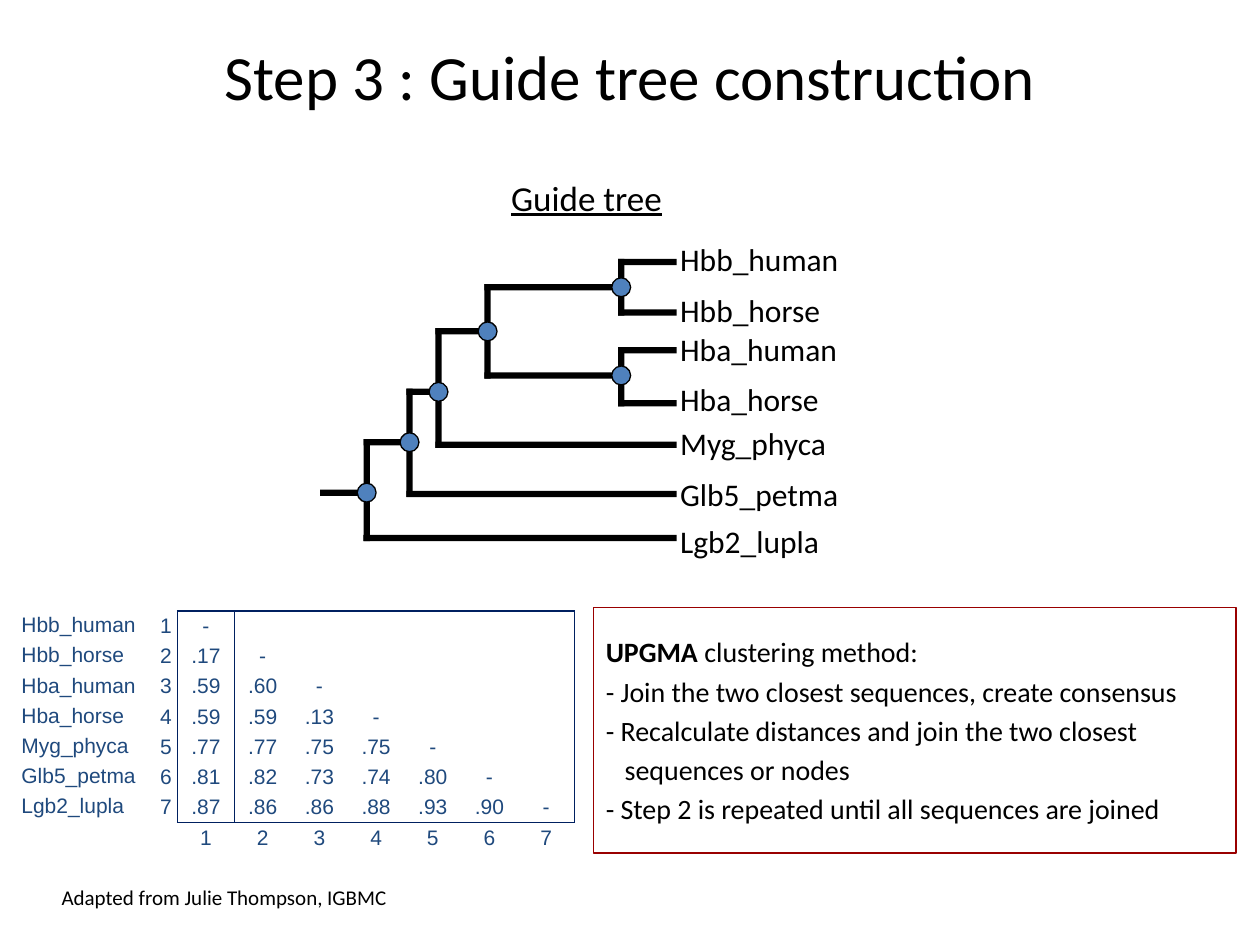
from lxml.etree import SubElement
from pptx import Presentation
from pptx.dml.color import RGBColor
from pptx.enum.shapes import MSO_SHAPE as Shape
from pptx.enum.text import MSO_ANCHOR as Anchor, PP_ALIGN as Align
from pptx.oxml.ns import qn
from pptx.util import Inches, Pt

BLACK = RGBColor(0, 0, 0)
BLUE = RGBColor(0x4F, 0x81, 0xBD)
NAVY = RGBColor(0x00, 0x20, 0x60)
INK = RGBColor(0x1F, 0x49, 0x7D)
RED = RGBColor(0x99, 0, 0)

# Name, height of the branch, top of the label, distances to the names above
LEAVES = [
    ("Hbb_human", 2.08, 1.86, []),
    ("Hbb_horse", 2.48, 2.26, [".17"]),
    ("Hba_human", 2.78, 2.57, [".59", ".60"]),
    ("Hba_horse", 3.2, 2.97, [".59", ".59", ".13"]),
    ("Myg_phyca", 3.53, 3.32, [".77", ".77", ".75", ".75"]),
    ("Glb5_petma", 3.92, 3.72, [".81", ".82", ".73", ".74", ".80"]),
    ("Lgb2_lupla", 4.27, 4.09, [".87", ".86", ".86", ".88", ".93", ".90"]),
]
# Node: x, y and its two children
NODES = {
    "hbb": (4.93, 2.28, "Hbb_human", "Hbb_horse"),
    "hba": (4.93, 2.98, "Hba_human", "Hba_horse"),
    "hb": (3.87, 2.63, "hbb", "hba"),
    "myg": (3.48, 3.11, "hb", "Myg_phyca"),
    "glb": (3.25, 3.51, "myg", "Glb5_petma"),
    "root": (2.91, 3.91, "glb", "Lgb2_lupla"),
}
METHOD = [  # indent, bold part, plain part
    (0, "UPGMA", "\u00a0clustering method:"),
    (0, "", "- Join the two closest sequences, create consensus"),
    (0, "", "- Recalculate distances and join the two closest"),
    (0.15, "", "sequences or nodes"),
    (0, "", "- Step 2 is repeated until all sequences are joined"),
]
TIP, STEM, BAR, DOT = 5.37, 2.54, 0.05, 0.15

deck = Presentation()
deck.slide_width, deck.slide_height = Inches(10), Inches(7.5)
slide = deck.slides.add_slide(deck.slide_layouts[6])
shapes = slide.shapes


def style(run, size, font="Calibri", color=BLACK):
    run.font.size, run.font.name = Pt(size), font
    run.font.color.rgb = color


def add_text(text, place, size, align=Align.LEFT, anchor=Anchor.TOP, wrap=True):
    frame = shapes.add_textbox(*map(Inches, place)).text_frame
    frame.text = text
    frame.word_wrap, frame.vertical_anchor = wrap, anchor
    para = frame.paragraphs[0]
    para.alignment = align
    style(para.runs[0], size)
    return para.runs[0]


def add_solid(kind, place, fill=None, line=None):
    shape = shapes.add_shape(kind, *map(Inches, place))
    shape.shadow.inherit = False
    if fill is None:
        shape.fill.background()
    else:
        shape.fill.solid()
        shape.fill.fore_color.rgb = fill
    if line is None:
        shape.line.fill.background()
    else:
        shape.line.color.rgb = line
        shape.line.width = Pt(0.75)
    return shape


def add_bar(x1, y1, x2, y2):
    """Thick branch between two points, with square ends."""
    half = BAR / 2
    place = (x1 - half, y1 - half, x2 - x1 + BAR, y2 - y1 + BAR)
    add_solid(Shape.RECTANGLE, place, BLACK)


def add_tree():
    spots = {name: (TIP - BAR / 2, y) for name, y, _, _ in LEAVES}
    spots |= {name: node[:2] for name, node in NODES.items()}
    for x, _, high, low in NODES.values():
        for child in (high, low):
            end, y = spots[child]
            add_bar(x, y, end, y)
        add_bar(x, spots[high][1], x, spots[low][1])
    x, y = spots["root"]
    add_bar(STEM + BAR / 2, y, x, y)
    for x, y, _, _ in NODES.values():
        add_solid(Shape.OVAL, (x - DOT / 2, y - DOT / 2, DOT, DOT), BLUE, BLACK)
    for name, _, top, _ in LEAVES:
        add_text(name, (5.3, top, 1.47, 0.4), 18, wrap=False)


def set_edges(cell, **edges):
    """Draw the edges that are true and clear the others."""
    props = cell._tc.get_or_add_tcPr()
    for side, drawn in edges.items():
        line = SubElement(props, qn(f"a:ln{side}"), w=str(Pt(1)))
        if drawn:
            fill = SubElement(line, qn("a:solidFill"))
            SubElement(fill, qn("a:srgbClr"), val=str(NAVY))
        else:
            SubElement(line, qn("a:noFill"))


def add_matrix():
    count = len(LEAVES)
    rows = [[name, str(i), *dist, "-"] + [""] * (count - i)
            for i, (name, _, _, dist) in enumerate(LEAVES, 1)]
    rows.append(["", ""] + [str(i) for i in range(1, count + 1)])
    widths = [1.1, 0.19] + [0.45] * count
    place = (0.12, 4.85, sum(widths), 0.22 * len(rows))
    table = shapes.add_table(len(rows), len(widths), *map(Inches, place)).table
    table.first_row = table.horz_banding = False
    for col, width in zip(table.columns, widths):
        col.width = Inches(width)
    uprights, levels = (2, 3, 2 + count), (0, count)
    for r, row in enumerate(rows):
        table.rows[r].height = Inches(0.22)
        for c, text in enumerate(row):
            cell = table.cell(r, c)
            cell.margin_left = cell.margin_right = Inches(0.05)
            cell.margin_top = cell.margin_bottom = Inches(0.02)
            set_edges(cell,
                      L=r < count and c in uprights,
                      R=r < count and c + 1 in uprights,
                      T=c > 1 and r in levels,
                      B=c > 1 and r + 1 in levels)
            cell.fill.background()
            para = cell.text_frame.paragraphs[0]
            if c:
                cell.vertical_anchor = Anchor.MIDDLE
                para.alignment = Align.CENTER
            if text:
                para.text = text
                style(para.runs[0], 12, "Arial", INK)
            else:
                SubElement(para._p, qn("a:endParaRPr"), sz="1200")


def add_method():
    box = add_solid(Shape.RECTANGLE, (4.71, 4.82, 5.1, 1.95), line=RED)
    frame = box.text_frame
    frame.word_wrap, frame.vertical_anchor = True, Anchor.MIDDLE
    for i, (indent, strong, plain) in enumerate(METHOD):
        para = frame.add_paragraph() if i else frame.paragraphs[0]
        para.alignment, para.space_before = Align.JUSTIFY, Pt(3.2)
        para._p.get_or_add_pPr().set("marL", str(Inches(indent)))
        for text, bold in ((strong, True), (plain, False)):
            if text:
                run = para.add_run()
                run.text, run.font.bold = text, bold
                style(run, 16)


add_text("Step 3 : Guide tree construction", (0.5, -0.03, 9, 1.25), 36,
         Align.CENTER, Anchor.MIDDLE)
head = add_text("Guide tree", (2.55, 1.35, 4.21, 0.44), 20, Align.CENTER)
head.font.underline = True
add_method()
add_matrix()
add_tree()
add_text("Adapted from Julie Thompson, IGBMC", (0.39, 6.92, 2.81, 0.4), 12,
         anchor=Anchor.MIDDLE)

deck.save("out.pptx")
